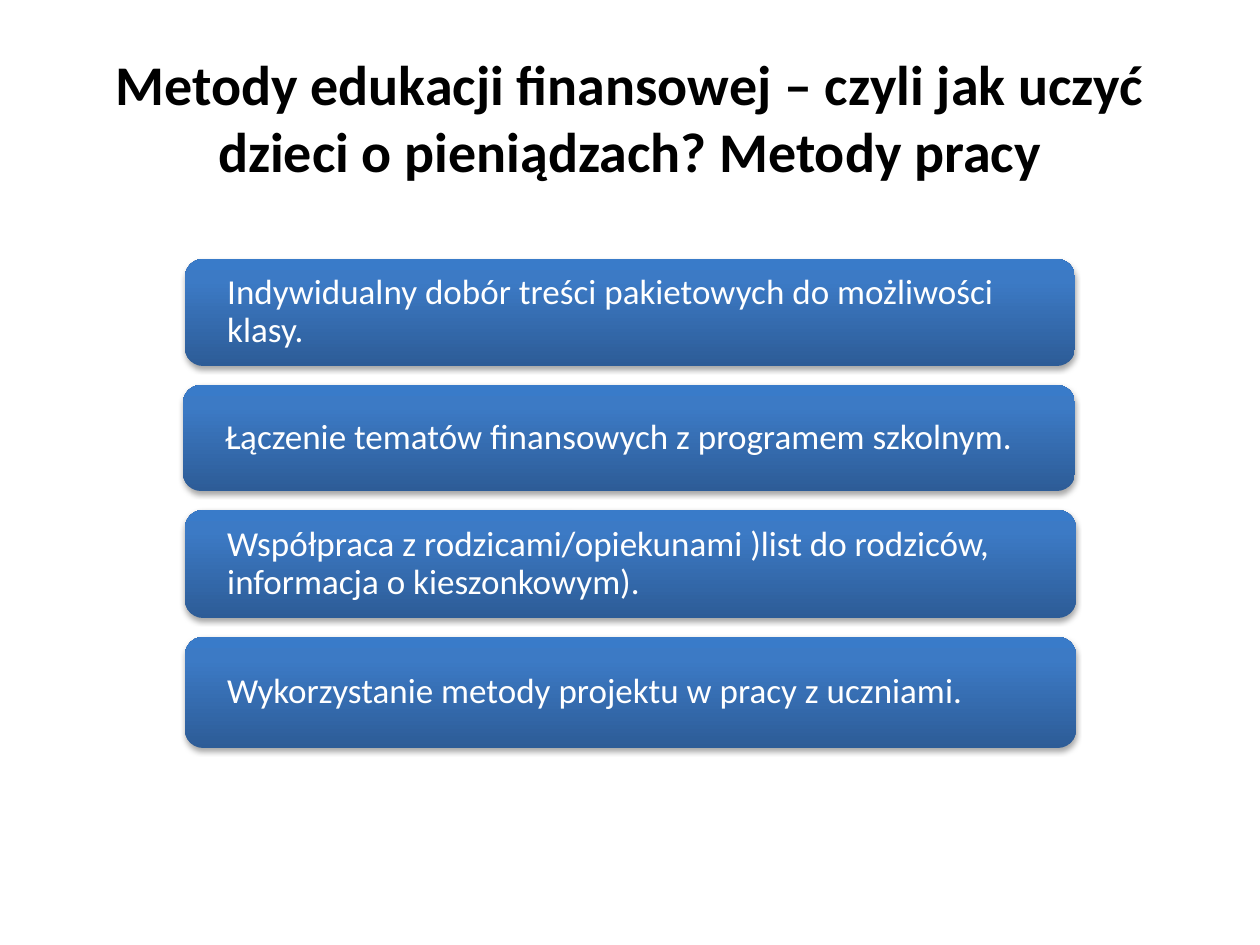
import pptx
import pptx.dml.color
import pptx.enum.shapes
import pptx.enum.text
import pptx.oxml
import pptx.oxml.ns
import pptx.util

EMU_PER_PX = 914400 / 126


def px(length):
    return pptx.util.Emu(round(length * EMU_PER_PX))


def colour(hex_code):
    return pptx.dml.color.RGBColor.from_string(hex_code)


class MethodsSlide:
    font_name = "Calibri"
    title_size, card_size = 32, 20
    title_colour, card_text_colour = "000000", "FFFFFF"
    card_gradient = [(0, "2D5C97"), (80, "3C7AC5"), (100, "397BC9")]
    corner_radius = 18

    def __init__(self, presentation):
        self.slide = presentation.slides.add_slide(presentation.slide_layouts[5])

    def add_text(self, frame, text, size, hex_code, align, insets, bold=False):
        frame.word_wrap = True
        frame.auto_size = pptx.enum.text.MSO_AUTO_SIZE.NONE
        frame.vertical_anchor = pptx.enum.text.MSO_ANCHOR.MIDDLE
        frame.margin_left = frame.margin_right = px(insets[0])
        frame.margin_top = frame.margin_bottom = px(insets[1])
        paragraph = frame.paragraphs[0]
        paragraph.alignment = align
        run = paragraph.add_run()
        run.text = text
        run.font.name = self.font_name
        run.font.size = pptx.util.Pt(size)
        run.font.bold = bold
        run.font.color.rgb = colour(hex_code)
        return paragraph

    def title(self, text, left, top, width, height):
        heading = self.slide.shapes.title
        heading.left, heading.top = px(left), px(top)
        heading.width, heading.height = px(width), px(height)
        self.add_text(heading.text_frame, text, self.title_size, self.title_colour,
                      pptx.enum.text.PP_ALIGN.CENTER, (13, 6), bold=True)

    def card(self, text, left, top, width, height):
        card = self.slide.shapes.add_shape(
            pptx.enum.shapes.MSO_SHAPE.ROUNDED_RECTANGLE,
            px(left), px(top), px(width), px(height))
        card.adjustments[0] = self.corner_radius / height
        card.line.fill.background()
        self.shade(card)
        self.drop_shadow(card)
        paragraph = self.add_text(card.text_frame, text, self.card_size,
                                  self.card_text_colour,
                                  pptx.enum.text.PP_ALIGN.LEFT, (37, 5))
        paragraph.line_spacing = 0.9

    def shade(self, card):
        card.fill.gradient()
        card.fill.gradient_angle = 90
        stops = card._element.spPr.find(".//" + pptx.oxml.ns.qn("a:gsLst"))
        for stop in list(stops):
            stops.remove(stop)
        for percent, hex_code in self.card_gradient:
            stops.append(pptx.oxml.parse_xml(
                f'<a:gs {pptx.oxml.ns.nsdecls("a")} pos="{percent * 1000}">'
                f'<a:srgbClr val="{hex_code}"/></a:gs>'))

    def drop_shadow(self, card):
        card.shadow.inherit = False
        effects = card._element.spPr.find(pptx.oxml.ns.qn("a:effectLst"))
        effects.append(pptx.oxml.parse_xml(
            f'<a:outerShdw {pptx.oxml.ns.nsdecls("a")} blurRad="40000" '
            'dist="23000" dir="5400000" rotWithShape="0">'
            '<a:srgbClr val="000000"><a:alpha val="35000"/></a:srgbClr>'
            '</a:outerShdw>'))


def main():
    presentation = pptx.Presentation()
    presentation.slide_width, presentation.slide_height = px(1260), px(945)
    methods = MethodsSlide(presentation)

    # Title
    methods.title("Metody edukacji finansowej – czyli jak uczyć dzieci "
                  "o pieniądzach? Metody pracy", 63, 38, 1134, 157)

    # Stack of method cards: text, left, width, height
    cards = [
        ("Indywidualny dobór treści pakietowych do możliwości klasy.",
         185, 890, 107),
        ("Łączenie tematów finansowych z programem szkolnym.",
         183, 892, 106),
        ("Współpraca z rodzicami/opiekunami )list do rodziców, "
         "informacja o kieszonkowym).", 185, 891, 108),
        ("Wykorzystanie metody projektu w pracy z uczniami.",
         185, 891, 111),
    ]
    top, gap = 259, 19
    for text, left, width, height in cards:
        methods.card(text, left, top, width, height)
        top += height + gap

    presentation.save("out.pptx")


if __name__ == "__main__":
    main()
